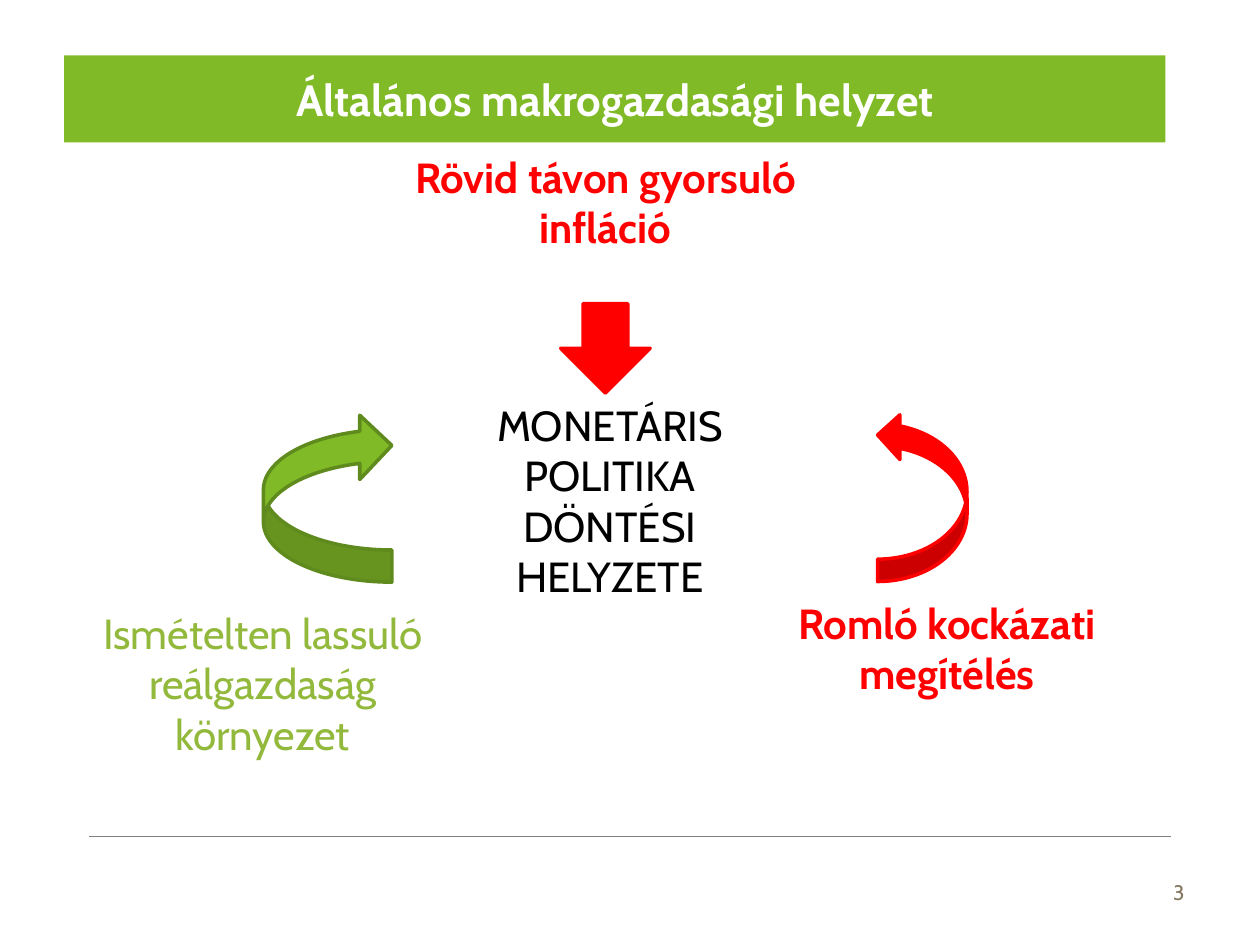
from lxml.etree import SubElement
from pptx import Presentation
from pptx.dml.color import RGBColor
from pptx.enum.shapes import MSO_CONNECTOR, MSO_SHAPE
from pptx.enum.text import MSO_ANCHOR, PP_ALIGN
from pptx.oxml.ns import qn
from pptx.util import Inches, Pt

COLORS = {
    "green": "80BA27", "dark green": "5F8A1D", "light green": "92B93B",
    "red": "FF0000", "black": "000000", "white": "FFFFFF",
    "grey": "808080", "olive": "857760",
}


def rgb(name):
    return RGBColor.from_string(COLORS[name])


def write(shape, text, size, color, bold=False, align=PP_ALIGN.CENTER):
    tf = shape.text_frame
    tf.word_wrap = True
    tf.text = text
    p = tf.paragraphs[0]
    p.alignment = align
    font = p.runs[0].font
    font.name = "Cabin"
    font.size = Pt(size)
    font.bold = bold
    font.color.rgb = rgb(color)


prs = Presentation()
prs.slide_width, prs.slide_height = Inches(10), Inches(7.5)
s = prs.slides.add_slide(prs.slide_layouts[5])

# Footer rule and page number
rule = s.shapes.add_connector(
    MSO_CONNECTOR.STRAIGHT, Inches(0.71), Inches(6.64), Inches(9.29), Inches(6.64))
rule.line.color.rgb = rgb("grey")
rule.line.width = Pt(1)
SubElement(rule._element.spPr, qn("a:effectLst"))

number = s.shapes.add_textbox(Inches(8.7), Inches(6.88), Inches(0.8), Inches(0.4))
write(number, "3", 12, "olive", align=PP_ALIGN.RIGHT)
number.text_frame.vertical_anchor = MSO_ANCHOR.MIDDLE

# Title bar
title = s.shapes.title
title.left, title.top = Inches(0.51), Inches(0.44)
title.width, title.height = Inches(8.74), Inches(0.69)
title.fill.solid()
title.fill.fore_color.rgb = rgb("green")
write(title, "Általános makrogazdasági helyzet", 25, "white", bold=True)
title.text_frame.vertical_anchor = MSO_ANCHOR.MIDDLE

# Three factors around the decision
labels = [
    ("Romló kockázati megítélés", 6.1, 4.69, 2.83, 0.91, "red", True),
    ("Ismételten lassuló reálgazdaság környezet", 0.59, 4.77, 2.99, 1.31,
     "light green", False),
    ("Rövid távon gyorsuló infláció", 3.19, 1.15, 3.23, 0.91, "red", True),
    ("MONETÁRIS POLITIKA DÖNTÉSI HELYZETE", 3.66, 3.12, 2.36, 1.72, "black", False),
]
for text, left, top, width, height, color, bold in labels:
    box = s.shapes.add_textbox(Inches(left), Inches(top), Inches(width), Inches(height))
    write(box, text, 24, color, bold)

arrows = [
    (MSO_SHAPE.DOWN_ARROW, 4.45, 2.41, 0.71, 0.71, 0, "red", "red"),
    (MSO_SHAPE.CURVED_DOWN_ARROW, 1.93, 3.44, 1.34, 1.02, 270, "green", "dark green"),
    (MSO_SHAPE.CURVED_UP_ARROW, 6.65, 3.59, 1.34, 0.71, 270, "red", "red"),
]
for kind, left, top, width, height, rotation, fill, line in arrows:
    arrow = s.shapes.add_shape(
        kind, Inches(left), Inches(top), Inches(width), Inches(height))
    arrow.rotation = rotation
    arrow.shadow.inherit = False
    arrow.fill.solid()
    arrow.fill.fore_color.rgb = rgb(fill)
    arrow.line.color.rgb = rgb(line)
    arrow.line.width = Pt(2)

prs.save("out.pptx")
